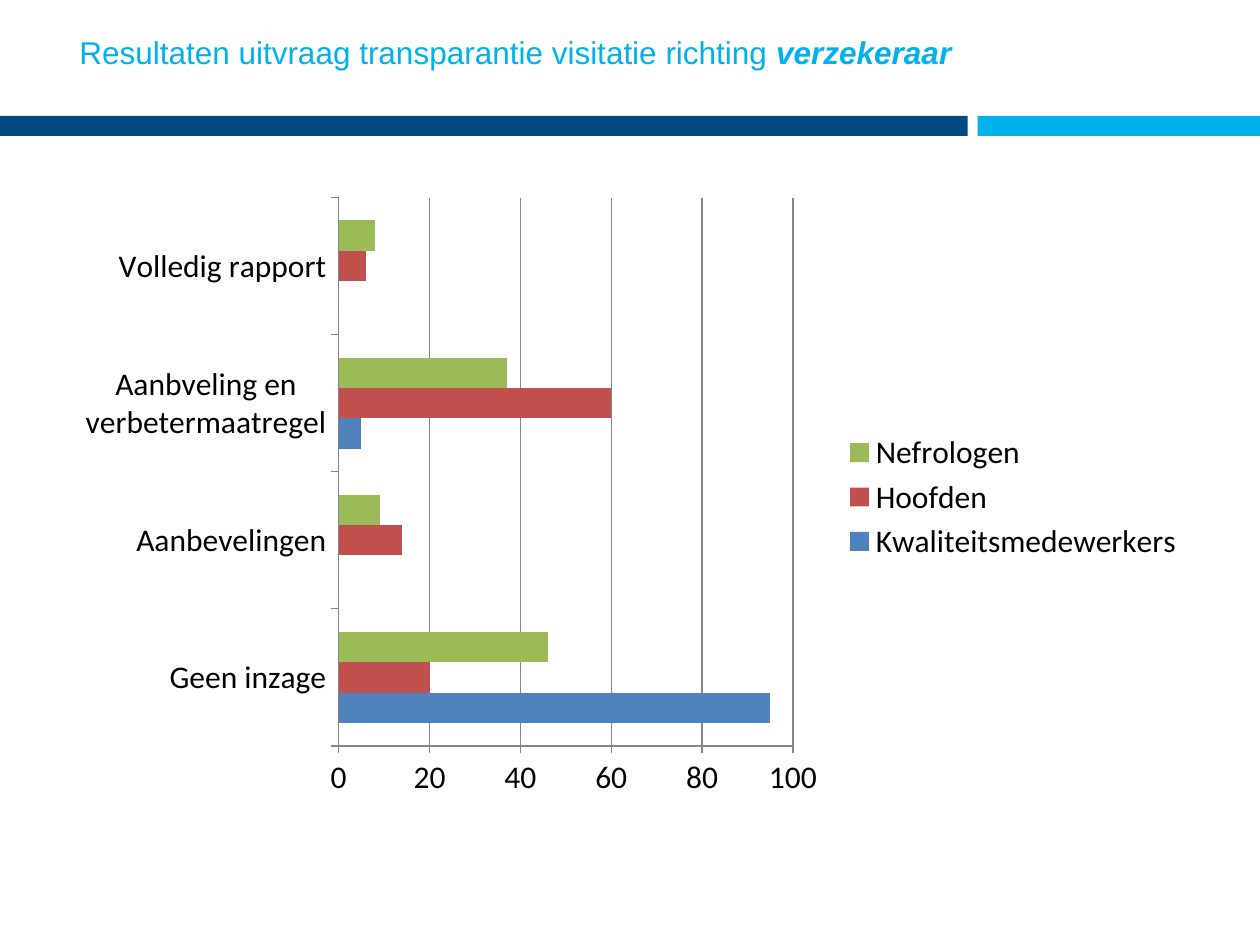
import pptx
import pptx.chart.data
import pptx.dml.color
import pptx.enum.chart
import pptx.enum.shapes
import pptx.enum.text
import pptx.util

SKY, NAVY, GREY, BLACK = "01B1EC", "004C82", "868686", "000000"
CATEGORIES = ["Geen inzage", "Aanbevelingen", "Aanbveling en verbetermaatregel", "Volledig rapport"]
SERIES = [
    ("Kwaliteitsmedewerkers", "4F81BD", (95, 0, 5, 0)),
    ("Hoofden", "C0504D", (20, 14, 60, 6)),
    ("Nefrologen", "9BBB59", (46, 9, 37, 8)),
]


def colour(value):
    return pptx.dml.color.RGBColor.from_string(value)


class SlideBuilder:
    """Holds the deck style and the current slide; lengths are shares of the slide size."""

    heading_font = "Arial"
    chart_font = "Calibri"
    text_size = pptx.util.Pt(18)

    def __init__(self, deck):
        self.width, self.height = deck.slide_width, deck.slide_height
        self.page = deck.slides.add_slide(deck.slide_layouts[5])

    def place(self, left, top, width, height):
        return (int(left * self.width), int(top * self.height),
                int(width * self.width), int(height * self.height))

    def band(self, area, fill):
        box = self.page.shapes.add_shape(pptx.enum.shapes.MSO_SHAPE.RECTANGLE, *self.place(*area))
        box.shadow.inherit = False
        box.fill.solid()
        box.fill.fore_color.rgb = colour(fill)
        box.line.fill.background()

    def title(self, area, text, emphasis):
        box = self.page.shapes.title
        box.left, box.top, box.width, box.height = self.place(*area)
        frame = box.text_frame
        frame.text = text
        frame.vertical_anchor = pptx.enum.text.MSO_ANCHOR.TOP
        para = frame.paragraphs[0]
        para.alignment = pptx.enum.text.PP_ALIGN.CENTER
        strong = para.add_run()
        strong.text = emphasis
        strong.font.bold = strong.font.italic = True
        for span in para.runs:
            span.font.name = self.heading_font
            span.font.size = self.text_size
            span.font.color.rgb = colour(SKY)

    def style_line(self, line):
        line.color.rgb = colour(GREY)
        line.width = pptx.util.Pt(0.75)

    def bar_chart(self, area, categories, series):
        data = pptx.chart.data.CategoryChartData()
        data.categories = categories
        for name, _, values in series:
            data.add_series(name, values)
        kind = pptx.enum.chart.XL_CHART_TYPE.BAR_CLUSTERED
        chart = self.page.shapes.add_chart(kind, *self.place(*area), data).chart
        chart.has_title = False
        chart.font.name = self.chart_font
        chart.font.size = self.text_size
        chart.font.color.rgb = colour(BLACK)
        chart.has_legend = True
        chart.legend.position = pptx.enum.chart.XL_LEGEND_POSITION.RIGHT
        chart.legend.include_in_layout = False
        for axis in (chart.category_axis, chart.value_axis):
            axis.major_tick_mark = pptx.enum.chart.XL_TICK_MARK.OUTSIDE
            axis.minor_tick_mark = pptx.enum.chart.XL_TICK_MARK.NONE
            self.style_line(axis.format.line)
        scale = chart.value_axis
        scale.minimum_scale, scale.maximum_scale, scale.major_unit = 0, 100, 20
        scale.has_major_gridlines = True
        self.style_line(scale.major_gridlines.format.line)
        plot = chart.plots[0]
        plot.gap_width = 150
        plot.overlap = 0
        plot.vary_by_categories = False
        for bars, (_, fill, _) in zip(plot.series, series):
            bars.format.fill.solid()
            bars.format.fill.fore_color.rgb = colour(fill)


def main():
    deck = pptx.Presentation()
    deck.slide_width = pptx.util.Inches(10)
    deck.slide_height = pptx.util.Inches(7.5)
    slide = SlideBuilder(deck)
    band_top, band_height = 0.92 / 7.5, 0.16 / 7.5
    slide.band((0.776, band_top, 0.224, band_height), SKY)
    slide.band((0, band_top, 0.768, band_height), NAVY)
    slide.title((0.05, 0.21 / 7.5, 0.718, 0.61 / 7.5),
                "Resultaten uitvraag transparantie visitatie richting ", "verzekeraar")
    slide.bar_chart((0.05, 1.47 / 7.5, 0.9, 0.66), CATEGORIES, SERIES)
    deck.save("out.pptx")


if __name__ == "__main__":
    main()
